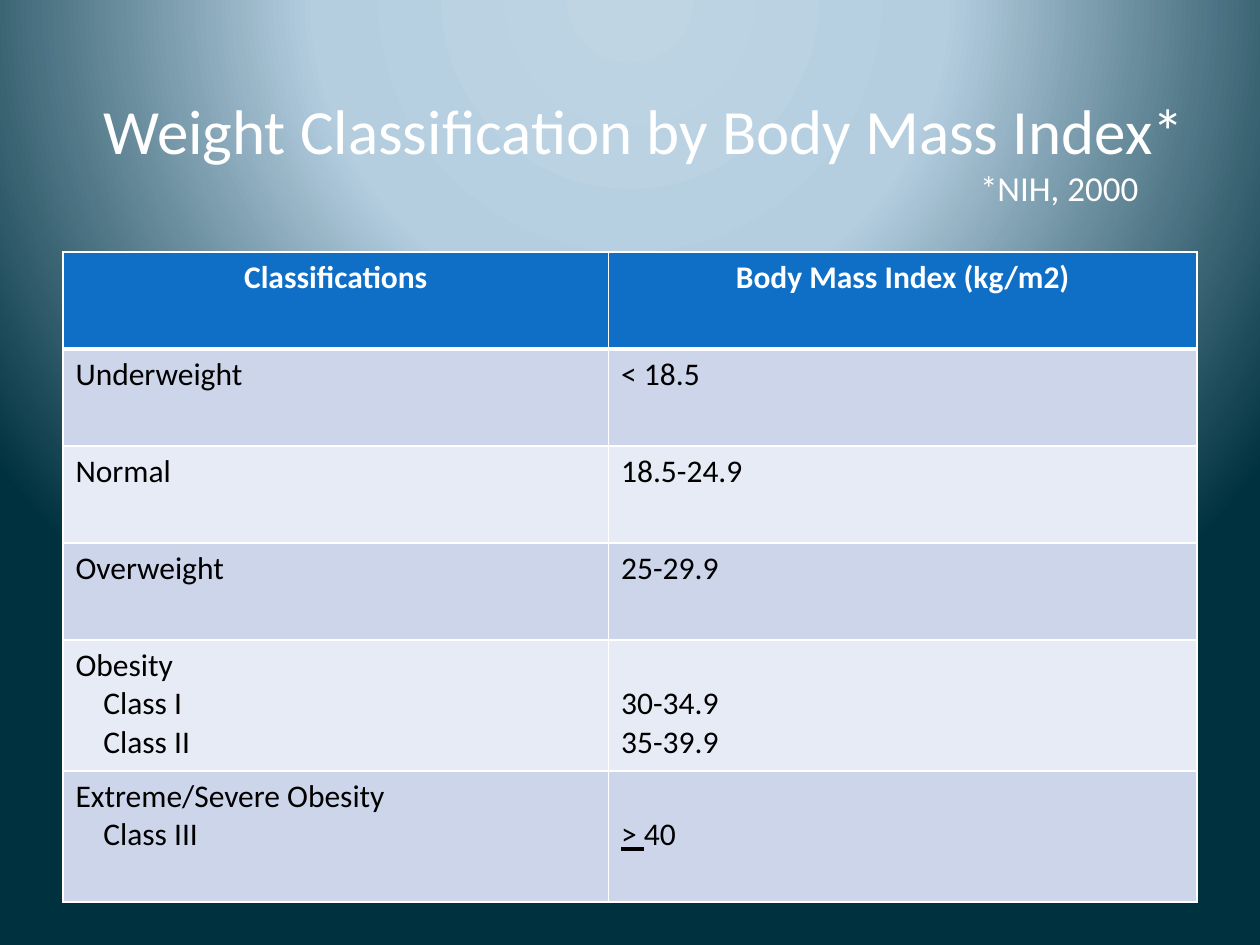
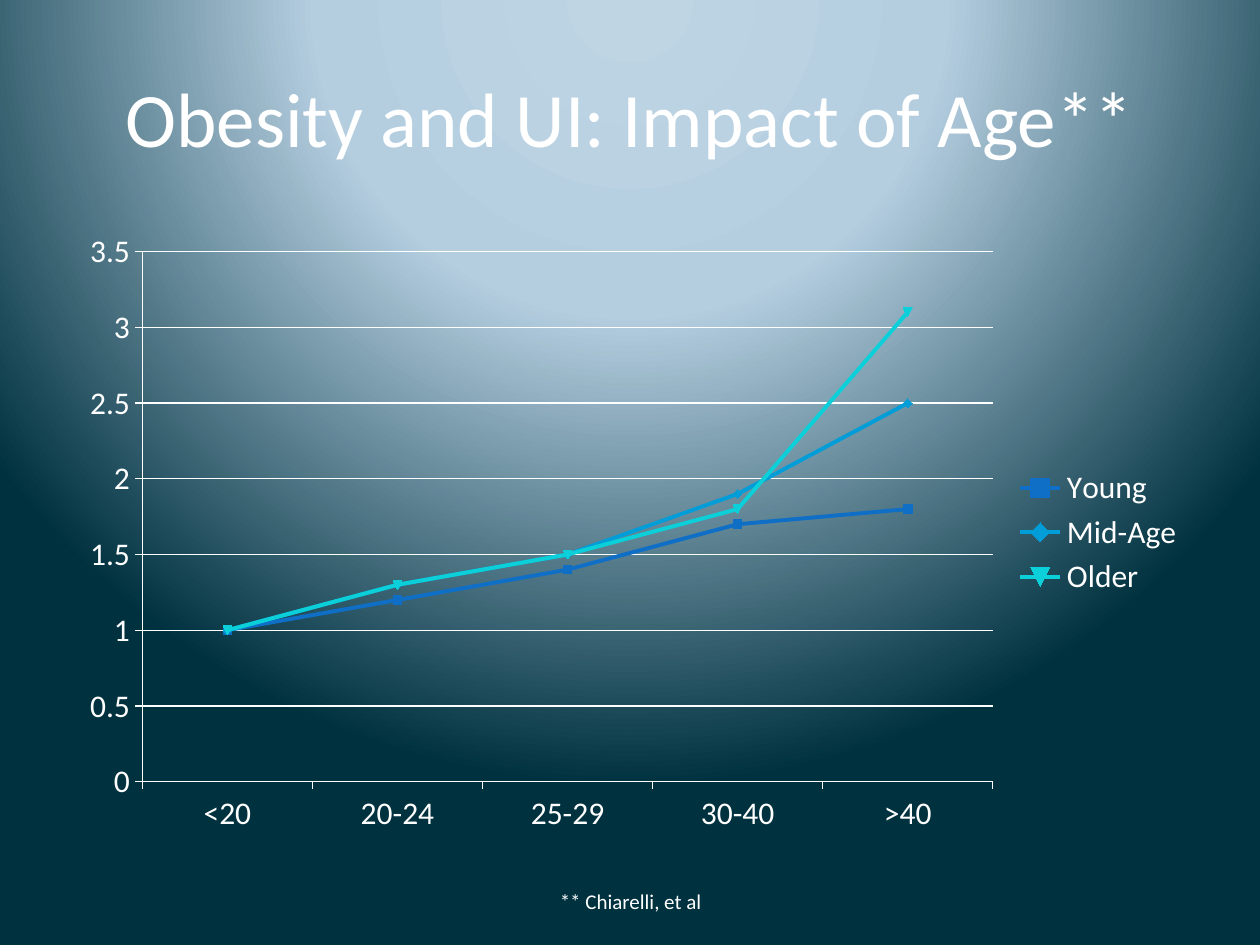
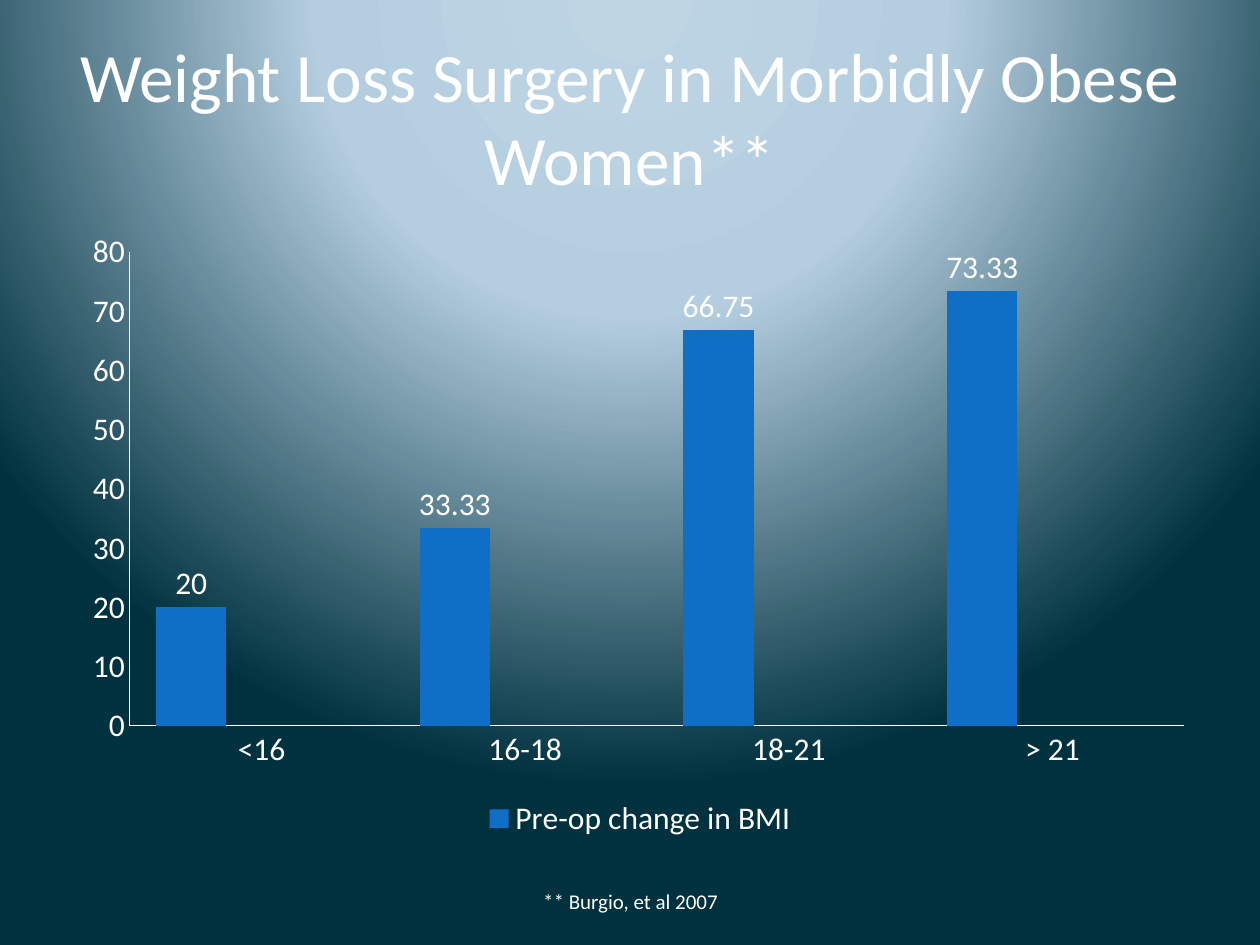
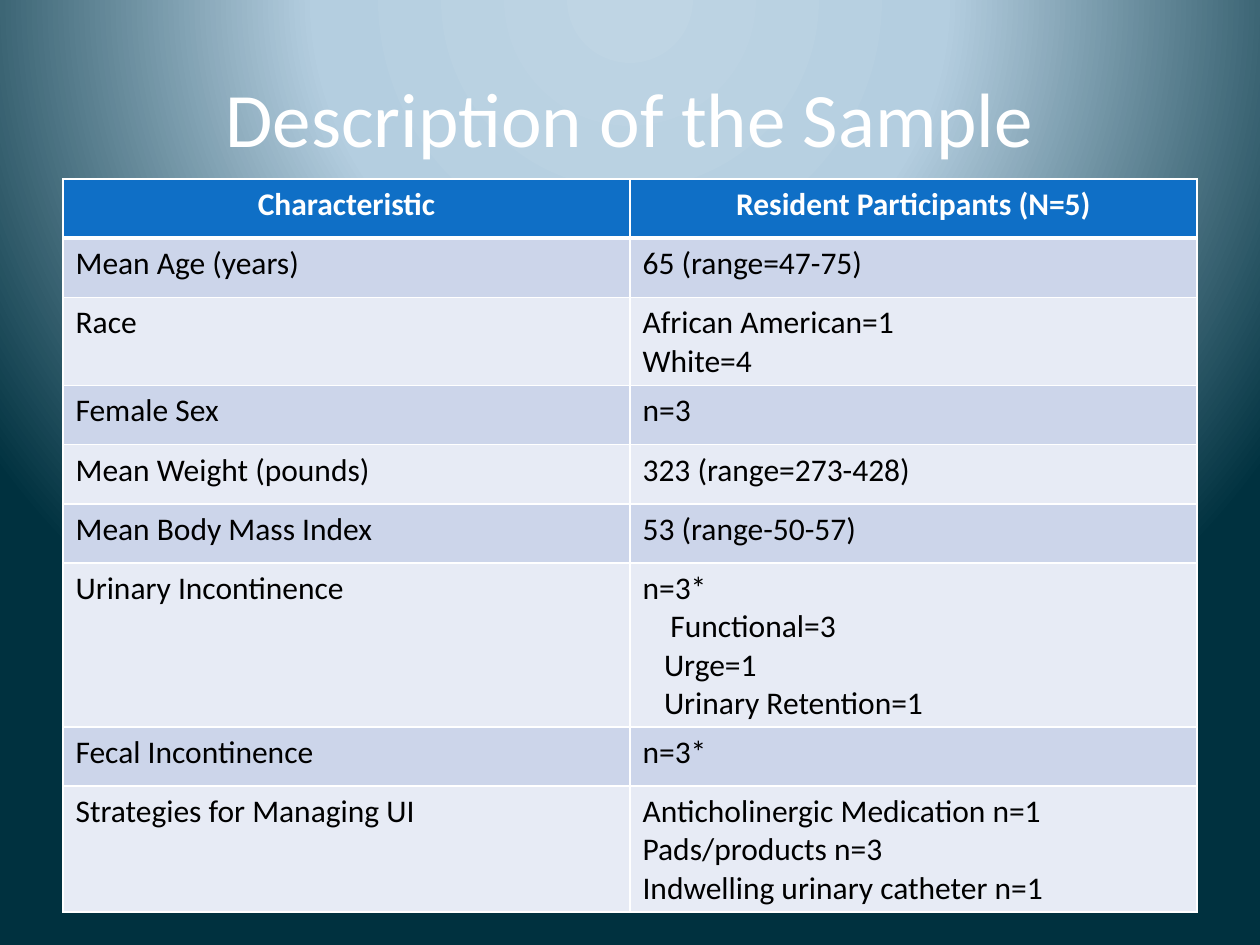
from dataclasses import dataclass
from pptx import Presentation
from pptx.chart.data import CategoryChartData as ChartData
from pptx.dml.color import RGBColor as RGB
from pptx.enum.chart import XL_CHART_TYPE as Kind, XL_LABEL_POSITION as Spot
from pptx.enum.chart import XL_LEGEND_POSITION as Side, XL_TICK_MARK as Tick
from pptx.enum.text import MSO_ANCHOR as Anchor, PP_ALIGN as Align
from pptx.oxml import parse_xml
from pptx.oxml.ns import nsdecls, qn
from pptx.util import Inches, Pt


@dataclass(frozen=True)
class Theme:
    font: str = "Calibri"
    white: str = "FFFFFF"
    black: str = "000000"
    head: str = "0F6FC6"
    bands: tuple = ("CCD5EA", "E7EBF5")
    series: tuple = ("0F6FC6", "009DD9", "0BD0D9")
    glow: tuple = ((0, "BFD5E4"), (40, "B4CEE0"), (100, "00313F"))
    title: float = 44
    body: float = 18
    note: float = 12


T = Theme()

# Content. In a table cell, (inches, text) is an indented line, None skips
# a line at the top, and text between underscores is underlined.
WEIGHT = {
    "title": "Weight Classification by Body Mass Index*",
    "source": "*NIH, 2000",
    "top": 2, "cols": (4.33, 4.67),
    "heights": (0.77, 0.77, 0.77, 0.77, 1.04, 1.04),
    "rows": [
        ("Classifications", "Body Mass Index (kg/m2)"),
        ("Underweight", "< 18.5"),
        ("Normal", "18.5-24.9"),
        ("Overweight", "25-29.9"),
        (["Obesity", (0.22, "Class I"), (0.22, "Class II")],
         [None, "30-34.9", "35-39.9"]),
        (["Extreme/Severe Obesity", (0.22, "Class III")], [None, "_> _40"]),
    ],
}
AGE = {
    "title": "Obesity and UI: Impact of Age**",
    "note": "** Chiarelli, et al",
    "kind": Kind.LINE_MARKERS, "left": 0.5, "plot": (0.07, 0.05, 0.75, 0.85),
    "legend": Side.RIGHT, "max": 3.5, "step": 0.5,
    "cats": ("<20", "20-24", "25-29", "30-40", ">40"),
    "series": {
        "Young": (1, 1.2, 1.4, 1.7, 1.8),
        "Mid-Age": (1, 1.3, 1.5, 1.9, 2.5),
        "Older": (1, 1.3, 1.5, 1.8, 3.1),
    },
}
SURGERY = {
    "title": "Weight Loss Surgery in Morbidly Obese Women**", "size": 39.6,
    "note": "** Burgio, et al 2007",
    "kind": Kind.COLUMN_CLUSTERED, "left": 0.58,
    "plot": (0.05, 0.05, 0.93, 0.76),
    "legend": Side.BOTTOM, "max": 80, "step": 10,
    "cats": ("<16", "16-18", "18-21", "> 21"),
    "series": {
        "Pre-op change in BMI": (20, 33.33, 66.75, 73.33),
        "Series 2": (None,) * 4,
        "Series 3": (None,) * 4,
    },
}
SAMPLE = {
    "title": "Description of the Sample",
    "top": 1.42, "cols": (4.5, 4.5),
    "heights": (0.47, 0.47, 0.69, 0.47, 0.47, 0.47, 1.28, 0.47, 0.96),
    "rows": [
        ("Characteristic", "Resident Participants (N=5)"),
        ("Mean Age (years)", "65 (range=47-75)"),
        ("Race", ["African American=1", "White=4"]),
        ("Female Sex", "n=3"),
        ("Mean Weight (pounds)", "323 (range=273-428)"),
        ("Mean Body Mass Index", "53 (range-50-57)"),
        ("Urinary Incontinence",
         ["n=3*", (0.22, "Functional=3"), (0.17, "Urge=1"),
          (0.17, "Urinary Retention=1")]),
        ("Fecal Incontinence", "n=3*"),
        ("Strategies for Managing UI",
         ["Anticholinergic Medication n=1", "Pads/products n=3",
          "Indwelling urinary catheter n=1"]),
    ],
}


# Text
def style(font, size, color=T.white, bold=False):
    font.name, font.size, font.bold = T.font, Pt(size), bold
    font.color.rgb = RGB.from_string(color)


def indent(para, inches):
    props = para._p.get_or_add_pPr()
    props.set("marL", str(Inches(inches)))
    props.set("indent", "0")


def add_text(slide, box, text, size, align=Align.CENTER):
    frame = slide.shapes.add_textbox(*map(Inches, box)).text_frame
    frame.word_wrap, frame.vertical_anchor = True, Anchor.MIDDLE
    para = frame.paragraphs[0]
    para.text, para.alignment = text, align
    style(para.font, size)
    return frame


def add_title(slide, item):
    if "source" not in item:
        add_text(slide, (0.5, 0.3, 9, 1.25), item["title"],
                 item.get("size", T.title))
        return
    frame = add_text(slide, (0.5, 0.3, 9, 1.78), item["title"], 36, Align.RIGHT)
    para = frame.add_paragraph()
    para.text, para.alignment = item["source"], Align.LEFT
    indent(para, 7.18)
    style(para.font, 20)


# Tables
def add_borders(cell, head):
    props = cell._tc.get_or_add_tcPr()
    for n, side in enumerate("LRTB"):
        width = Pt(3 if head and side == "B" else 1)
        props.insert(n, parse_xml(
            f'<a:ln{side} {nsdecls("a")} w="{width}"><a:solidFill>'
            f'<a:srgbClr val="{T.white}"/></a:solidFill></a:ln{side}>'))


def fill_cell(cell, lines, row):
    head = row == 0
    cell.fill.solid()
    cell.fill.fore_color.rgb = RGB.from_string(
        T.head if head else T.bands[(row - 1) % 2])
    add_borders(cell, head)
    lines = [lines] if isinstance(lines, str) else lines
    if lines[0] is None:
        cell.margin_top = Inches(0.05) + Pt(T.body * 1.22)
        lines = lines[1:]
    frame = cell.text_frame
    for n, line in enumerate(lines):
        para = frame.add_paragraph() if n else frame.paragraphs[0]
        if isinstance(line, tuple):
            indent(para, line[0])
            line = line[1]
        para.alignment = Align.CENTER if head else Align.LEFT
        style(para.font, T.body, T.white if head else T.black, head)
        for k, part in enumerate(line.split("_")):
            if part:
                run = para.add_run()
                run.text = part
                if k % 2:
                    run.font.underline = True


def add_grid(slide, item):
    rows, cols, heights = item["rows"], item["cols"], item["heights"]
    table = slide.shapes.add_table(
        len(rows), len(cols), Inches(0.5), Inches(item["top"]),
        Inches(sum(cols)), Inches(sum(heights))).table
    table.horz_banding = False
    for col, width in zip(table.columns, cols):
        col.width = Inches(width)
    for r, (height, cells) in enumerate(zip(heights, rows)):
        table.rows[r].height = Inches(height)
        for c, lines in enumerate(cells):
            fill_cell(table.cell(r, c), lines, r)


# Charts
def paint(line, color=T.white, width=0.75):
    line.color.rgb = RGB.from_string(color)
    line.width = Pt(width)


def place_plot(chart, spots):
    area = chart._chartSpace.chart.plotArea
    for old in area.findall(qn("c:layout")):
        area.remove(old)
    marks = "".join(f'<c:{tag} val="{val}"/>' for tag, val in zip("xywh", spots))
    area.insert(0, parse_xml(
        f'<c:layout {nsdecls("c")}><c:manualLayout>'
        '<c:layoutTarget val="inner"/><c:xMode val="edge"/><c:yMode val="edge"/>'
        f'{marks}</c:manualLayout></c:layout>'))


def add_legend(chart, item):
    chart.has_legend = True
    legend = chart.legend
    legend.position, legend.include_in_layout = item["legend"], False
    style(legend.font, T.body)
    # Series without values have no legend entry
    blank = [n for n, vals in enumerate(item["series"].values())
             if not any(vals)]
    for spot, n in enumerate(blank, 1):
        legend._element.insert(spot, parse_xml(
            f'<c:legendEntry {nsdecls("c")}><c:idx val="{n}"/>'
            '<c:delete val="1"/></c:legendEntry>'))


def add_plot(slide, item):
    data = ChartData()
    data.categories = item["cats"]
    for name, vals in item["series"].items():
        data.add_series(name, vals)
    box = map(Inches, (item["left"], 1.75, 9, 4.95))
    chart = slide.shapes.add_chart(item["kind"], *box, data).chart
    chart.has_title = False
    style(chart.font, T.body)
    place_plot(chart, item["plot"])
    add_legend(chart, item)

    lined = item["kind"] == Kind.LINE_MARKERS
    for axis in (chart.category_axis, chart.value_axis):
        axis.major_tick_mark = Tick.OUTSIDE if lined else Tick.NONE
        axis.minor_tick_mark = Tick.NONE
        style(axis.tick_labels.font, T.body)
        paint(axis.format.line)
    scale = chart.value_axis
    scale.minimum_scale, scale.maximum_scale = 0, item["max"]
    scale.major_unit = item["step"]
    scale.has_major_gridlines = lined
    if lined:
        paint(scale.major_gridlines.format.line)

    plot = chart.plots[0]
    plot.vary_by_categories = False
    for series, color in zip(plot.series, T.series):
        fill = series.marker.format.fill if lined else series.format.fill
        fill.solid()
        fill.fore_color.rgb = RGB.from_string(color)
        if lined:
            series.smooth = False
            paint(series.format.line, color, 2.25)
            paint(series.marker.format.line, color)
    if not lined:
        plot.gap_width, plot.overlap = 75, 0
        plot.has_data_labels = True
        labels = plot.data_labels
        labels.show_value, labels.position = True, Spot.OUTSIDE_END
        style(labels.font, T.body)

    add_text(slide, (3.42, 6.95, 3.17, 0.4), item["note"], T.note)


# Shared background
def set_back(master):
    stops = "".join(f'<a:gs pos="{pos * 1000}"><a:srgbClr val="{color}"/></a:gs>'
                    for pos, color in T.glow)
    base = master._element.cSld
    for old in base.findall(qn("p:bg")):
        base.remove(old)
    base.insert(0, parse_xml(
        f'<p:bg {nsdecls("p", "a")}><p:bgPr><a:gradFill rotWithShape="1">'
        f'<a:gsLst>{stops}</a:gsLst><a:path path="circle">'
        '<a:fillToRect l="50000" t="-80000" r="50000" b="180000"/></a:path>'
        '</a:gradFill><a:effectLst/></p:bgPr></p:bg>'))


def main():
    deck = Presentation()
    deck.slide_width, deck.slide_height = Inches(10), Inches(7.5)
    set_back(deck.slide_master)
    for item in (WEIGHT, AGE, SURGERY, SAMPLE):
        slide = deck.slides.add_slide(deck.slide_layouts[6])
        add_title(slide, item)
        draw = add_grid if "rows" in item else add_plot
        draw(slide, item)
    deck.save("out.pptx")


if __name__ == "__main__":
    main()
